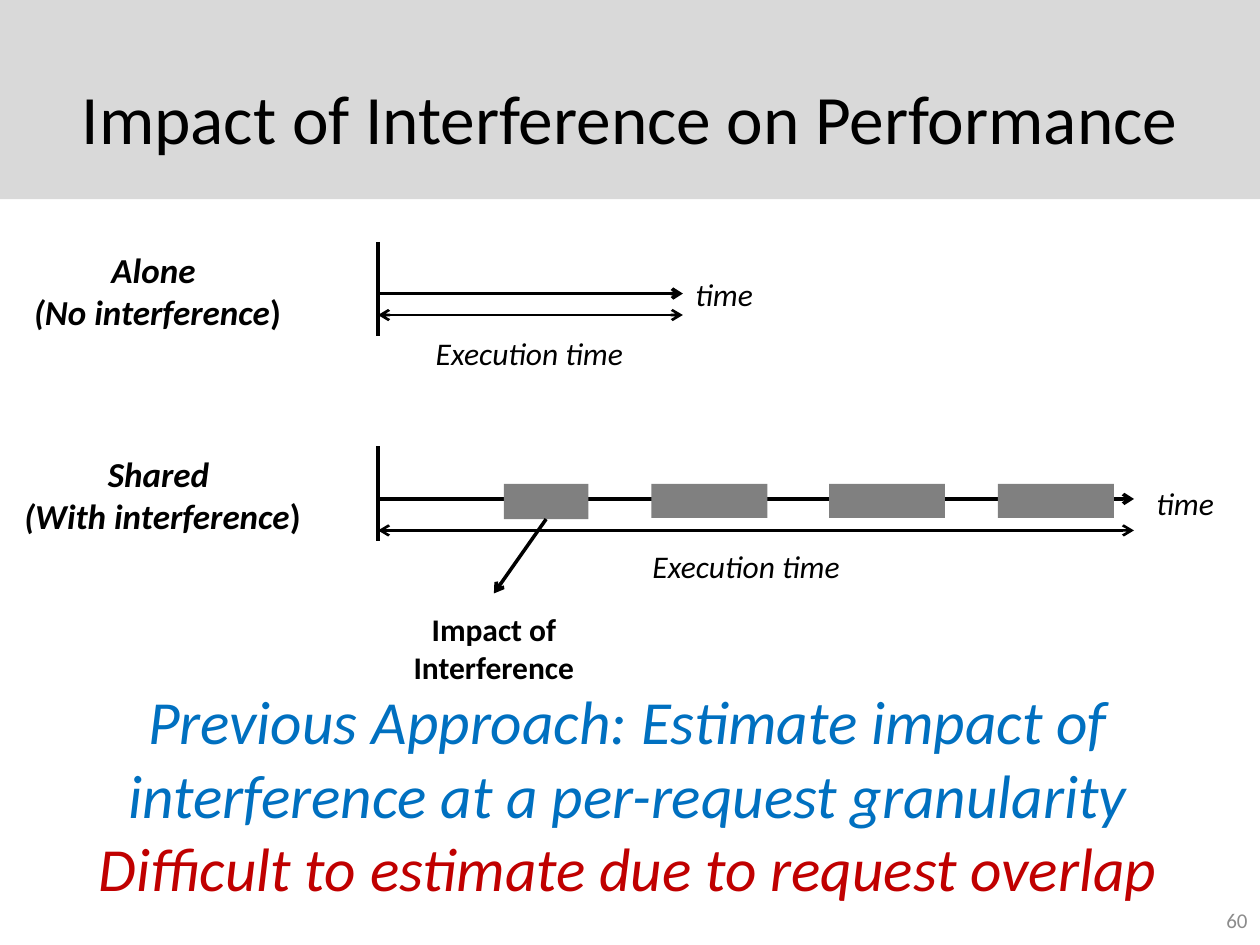
from lxml.etree import SubElement
from pptx import Presentation
from pptx.dml.color import RGBColor
from pptx.enum.shapes import MSO_CONNECTOR, MSO_SHAPE
from pptx.enum.text import MSO_ANCHOR, PP_ALIGN
from pptx.oxml.ns import qn
from pptx.util import Inches, Pt

BLACK = RGBColor(0x00, 0x00, 0x00)
WHITE = RGBColor(0xFF, 0xFF, 0xFF)
BAND = RGBColor(0xD9, 0xD9, 0xD9)
GRAY = RGBColor(0x80, 0x80, 0x80)
PALE = RGBColor(0x8C, 0x8C, 0x8C)
BLUE = RGBColor(0x00, 0x70, 0xC0)
RED = RGBColor(0xC0, 0x00, 0x00)
FONT = "Calibri"
LEFT, CENTER, RIGHT = PP_ALIGN.LEFT, PP_ALIGN.CENTER, PP_ALIGN.RIGHT

# Content
TITLE = "Impact of Interference on Performance"
START = 3  # left end of both time axes
CASES = [
    dict(name="Alone", note="(No interference", wide=2.5, top=1.92, end=5.42,
         axis=2.33, span=2.5, time=(5.42, 2.13), label=(3.36, 2.6)),
    dict(name="Shared", note="(With interference", wide=2.58, top=3.54, end=9,
         axis=3.96, span=4.21, time=(9.08, 3.79), label=(5.08, 4.29)),
]
BLOCKS = [(4, 0.67, 0.28), (5.17, 0.92, 0.27), (6.58, 0.92, 0.27), (7.92, 0.92, 0.27)]
BLOCK_TOP = 3.84
CLAIMS = [
    ("Previous Approach: Estimate impact of interference at a per-request granularity", BLUE),
    ("Difficult to estimate due to request overlap", RED),
]

deck = Presentation()
deck.slide_width, deck.slide_height = Inches(10), Inches(7.5)
slide = deck.slides.add_slide(deck.slide_layouts[5])
shapes = slide.shapes


def style(para, size, color=BLACK, bold=False, italic=False, align=LEFT):
    para.alignment = align
    for run in para.runs:
        font = run.font
        font.name, font.size, font.color.rgb = FONT, Pt(size), color
        font.bold, font.italic = bold, italic


def write(text, x, y, w, h, size, **look):
    box = shapes.add_textbox(Inches(x), Inches(y), Inches(w), Inches(h))
    frame = box.text_frame
    frame.word_wrap = True
    frame.text = text
    for para in frame.paragraphs:
        style(para, size, **look)
    return frame


def block(x, y, w, h, fill):
    rect = shapes.add_shape(MSO_SHAPE.RECTANGLE, Inches(x), Inches(y), Inches(w), Inches(h))
    rect.shadow.inherit = False
    rect.fill.solid()
    rect.fill.fore_color.rgb = fill
    rect.line.fill.background()
    return rect


def rule(x1, y1, x2, y2, width=2, ends=()):
    line = shapes.add_connector(MSO_CONNECTOR.STRAIGHT, Inches(x1), Inches(y1),
                                Inches(x2), Inches(y2))
    line.line.color.rgb = BLACK
    line.line.width = Pt(width)
    for end in ends:
        SubElement(line.line._get_or_add_ln(), qn(f"a:{end}"), type="arrow")
    SubElement(line._element.spPr, qn("a:effectLst"))
    return line


# Title on its band
band = block(0, 0, 10, 1.58, BAND)
shapes._spTree.insert(2, band._element)
title = shapes.title
title.left, title.top, title.width, title.height = map(Inches, (0.5, 0.3, 9, 1.25))
title.text_frame.text = TITLE
title.text_frame.vertical_anchor = MSO_ANCHOR.MIDDLE
style(title.text_frame.paragraphs[0], 39.6, align=CENTER)

# Slide number
number = write("60", 7.67, 7.1, 2.33, 0.4, 12, color=PALE, align=RIGHT)
number.vertical_anchor = MSO_ANCHOR.MIDDLE

# Timelines
for case in CASES:
    top, end = case["top"], case["end"]
    name = write(case["name"] + " \n" + case["note"], 0, top, case["wide"], 0.77, 20,
                 bold=True, italic=True, align=CENTER)
    close = name.paragraphs[1].add_run()
    close.text = ")"
    style(name.paragraphs[1], 20, bold=True, italic=True, align=CENTER)
    close.font.italic = False
    rule(START, top, START, top + 0.75)
    rule(START, case["axis"], end, case["axis"], ends=["tailEnd"])
    rule(START, case["span"], end, case["span"], 1.5, ["headEnd", "tailEnd"])
    write("time", *case["time"], 0.92, 0.4, 18, italic=True)
    write("Execution time", *case["label"], 1.92, 0.4, 18, italic=True)

# Interference blocks and their callout
delays = [block(x, BLOCK_TOP, w, h, GRAY) for x, w, h in BLOCKS]
arrow = rule(4.33, 4.13, 3.92, 4.71, ends=["tailEnd"])
arrow.begin_connect(delays[0], 2)
write("Impact of Interference", 3.17, 4.79, 1.5, 0.71, 18, bold=True, align=CENTER)

# Closing statement
panel = block(0.38, 5.5, 9.21, 1.6, WHITE).text_frame
panel.word_wrap = True
panel.vertical_anchor = MSO_ANCHOR.MIDDLE
panel.text = "\n".join(text for text, _ in CLAIMS)
for para, (_, color) in zip(panel.paragraphs, CLAIMS):
    style(para, 35, color, italic=True, align=CENTER)

deck.save("out.pptx")
